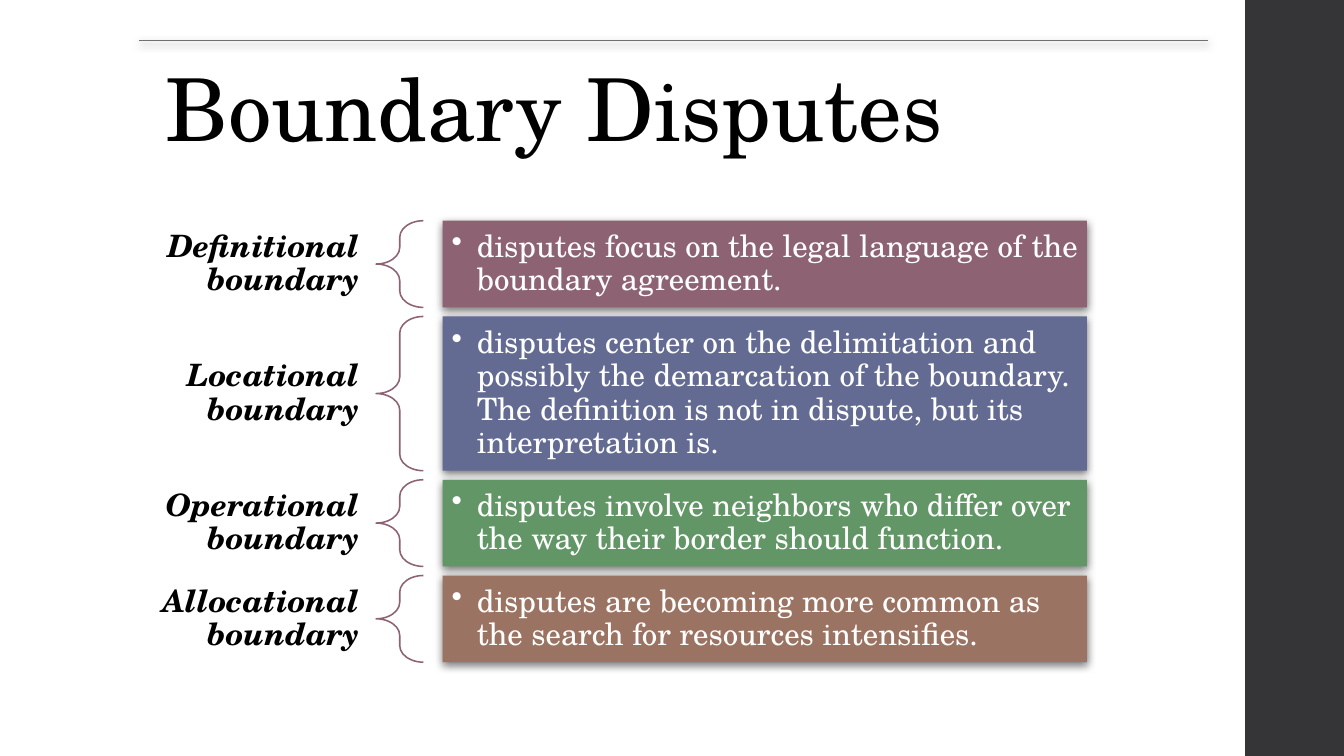
from lxml import etree
from pptx import Presentation
from pptx.dml.color import RGBColor
from pptx.enum import shapes, text
from pptx.oxml import ns
from pptx.util import Inches, Pt

FONT = "TeX Gyre Schola"
TITLE = "Boundary Disputes"
ROWS = [
    ("Definitional boundary", 0.86, "8D6374",
     "disputes focus on the legal language of the boundary agreement."),
    ("Locational boundary", 1.53, "636B92",
     "disputes center on the delimitation and possibly the demarcation of the boundary. "
     "The definition is not in dispute, but its interpretation is."),
    ("Operational boundary", 0.86, "629666",
     "disputes involve neighbors who differ over the way their border should function."),
    ("Allocational boundary", 0.86, "9B7362",
     "disputes are becoming more common as the search for resources intensifies."),
]
LEFT, TOP, GAP = 1.38, 2.19, 0.09
LABEL_W, LABEL_H = 2.35, 0.79
BRACE_X, BRACE_W = 3.73, 0.47
BOX_X, BOX_W = 4.39, 6.39


def color(value):
    return RGBColor.from_string(value)


def box(*nums):
    return [Inches(n) for n in nums]


def add(parent, tag, **attrs):
    return etree.SubElement(parent, ns.qn(tag), attrs)


def shade(shape):
    props = shape._element.spPr
    for old in props.findall(ns.qn("a:effectLst")):
        props.remove(old)
    drop = add(add(props, "a:effectLst"), "a:outerShdw", blurRad=str(Pt(6)),
               dist=str(Pt(2)), dir="5400000", rotWithShape="0")
    add(add(drop, "a:srgbClr", val="000000"), "a:alpha", val="55000")


def draw(kind, place, fill=None, line=None):
    shape = slide.shapes.add_shape(kind, *box(*place))
    shape.shadow.inherit = False
    if fill:
        shape.fill.solid()
        shape.fill.fore_color.rgb = color(fill)
    else:
        shape.fill.background()
    if line:
        shape.line.color.rgb = color(line)
        shape.line.width = Pt(1.1)
    else:
        shape.line.fill.background()
    return shape


def write(shape, words, size, ink, pad, anchor, align, bold=False):
    frame = shape.text_frame
    frame.word_wrap = True
    frame.auto_size = text.MSO_AUTO_SIZE.NONE
    frame.vertical_anchor = anchor
    frame.margin_left = frame.margin_right = Inches(pad[0])
    frame.margin_top = frame.margin_bottom = Inches(pad[1])
    frame.text = words
    para = frame.paragraphs[0]
    para.alignment = align
    para.line_spacing = 0.9
    font = para.font
    font.name, font.size, font.color.rgb = FONT, Pt(size), color(ink)
    font.bold = font.italic = bold
    return para


def bullet(para):
    props = para._p.get_or_add_pPr()
    props.set("marL", str(Inches(0.25)))
    props.set("indent", str(Inches(-0.25)))
    mark = etree.Element(ns.qn("a:buChar"), char="•")
    props.find(ns.qn("a:defRPr")).addprevious(mark)


deck = Presentation()
deck.slide_width, deck.slide_height = box(13.33, 7.5)
slide = deck.slides.add_slide(deck.slide_layouts[5])
SHAPE, ANCHOR, ALIGN = shapes.MSO_SHAPE, text.MSO_ANCHOR, text.PP_ALIGN

draw(SHAPE.RECTANGLE, (12.35, 0, 0.98, 7.5), "353537")
rule = slide.shapes.add_connector(
    shapes.MSO_CONNECTOR.STRAIGHT, *box(LEFT, 0.4, 11.98, 0.4))
rule.line.color.rgb = color("6F6F74")
rule.line.width = Pt(0.75)
shade(rule)

title = slide.shapes.title
title.left, title.top, title.width, title.height = box(LEFT, 0.4, 10.6, 1.45)
write(title, TITLE, 62, "000000", (0.26, 0.26), ANCHOR.TOP, ALIGN.LEFT)

top = TOP
for name, high, fill, words in ROWS:
    label = slide.shapes.add_textbox(
        *box(LEFT, top + (high - LABEL_H) / 2, LABEL_W, LABEL_H))
    write(label, name, 22, "000000", (0.17, 0.06), ANCHOR.MIDDLE, ALIGN.RIGHT, True)
    brace = draw(SHAPE.LEFT_BRACE, (BRACE_X, top, BRACE_W, high), line="8D6374")
    brace.adjustments[0] = 0.35
    panel = draw(SHAPE.RECTANGLE, (BOX_X, top, BOX_W, high), fill)
    shade(panel)
    bullet(write(panel, words, 22, "FFFFFF", (0.09, 0.09), ANCHOR.MIDDLE, ALIGN.LEFT))
    top += high + GAP

deck.save("out.pptx")
